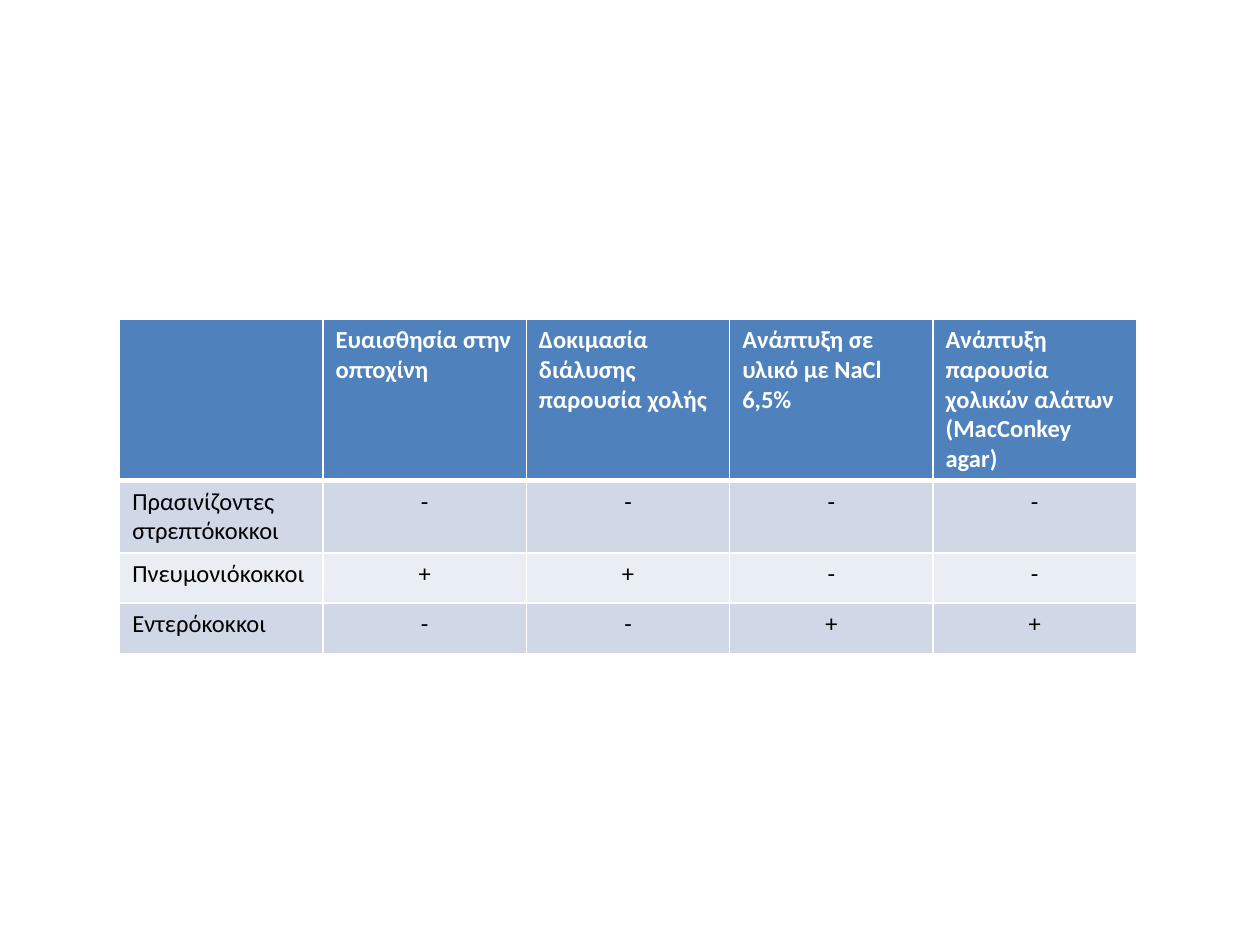
from dataclasses import dataclass

from lxml.etree import SubElement
from pptx import Presentation
from pptx.dml.color import RGBColor
from pptx.enum.text import PP_ALIGN
from pptx.oxml.ns import qn
from pptx.util import Inches, Pt


@dataclass(frozen=True)
class Theme:
    font: str = "Calibri"
    size: int = 14
    header: str = "4F81BD"
    bands: tuple = ("D0D8E8", "E9EDF4")
    light: str = "FFFFFF"
    dark: str = "000000"
    thin: int = 1
    thick: int = 3


HEADINGS = [
    "",
    "Ευαισθησία στην οπτοχίνη",
    "Δοκιμασία διάλυσης παρουσία χολής",
    "Ανάπτυξη σε υλικό με NaCl 6,5%",
    "Ανάπτυξη παρουσία χολικών αλάτων (MacConkey agar)",
]
RESULTS = {
    "Πρασινίζοντες στρεπτόκοκκοι": "----",
    "Πνευμονιόκοκκοι": "++--",
    "Εντερόκοκκοι": "--++",
}
ROW_HEIGHTS = [1.27, 0.57, 0.4, 0.4]


class SlideBuilder:
    def __init__(self, prs, theme):
        self.theme = theme
        self.s = prs.slides.add_slide(prs.slide_layouts[6])

    def borders(self, cell, top, bottom):
        tc_pr = cell._tc.get_or_add_tcPr()
        thin = self.theme.thin
        for side, width in {"L": thin, "R": thin, "T": top, "B": bottom}.items():
            ln = SubElement(tc_pr, qn(f"a:ln{side}"), w=str(Pt(width)))
            fill = SubElement(ln, qn("a:solidFill"))
            SubElement(fill, qn("a:srgbClr"), val=self.theme.light)

    def cell(self, cell, text, fill, color, bold, align):
        cell.fill.solid()
        cell.fill.fore_color.rgb = RGBColor.from_string(fill)
        p = cell.text_frame.paragraphs[0]
        p.alignment = align
        p.font.size = Pt(self.theme.size)
        if not text:
            return
        r = p.add_run()
        r.text = text
        formats = {"name": self.theme.font, "size": Pt(self.theme.size), "bold": bold}
        for name, value in formats.items():
            setattr(r.font, name, value)
        r.font.color.rgb = RGBColor.from_string(color)

    def table(self, rows, left, top, width, heights):
        t = self.theme
        table = self.s.shapes.add_table(
            len(rows), len(rows[0]), Inches(left), Inches(top),
            Inches(width), Inches(sum(heights))).table
        for row, height in zip(table.rows, heights):
            row.height = Inches(height)

        for i, texts in enumerate(rows):
            header = i == 0
            fill = t.header if header else t.bands[(i - 1) % 2]
            for j, text in enumerate(texts):
                cell = table.cell(i, j)
                # The heavy rule lies between the header and the first row
                self.borders(cell, t.thick if i == 1 else t.thin,
                             t.thick if header else t.thin)
                centred = not header and j > 0
                self.cell(cell, text, fill, t.light if header else t.dark, header,
                          PP_ALIGN.CENTER if centred else PP_ALIGN.LEFT)


def main():
    prs = Presentation()
    prs.slide_width, prs.slide_height = Inches(10), Inches(7.5)

    # Table of test results
    builder = SlideBuilder(prs, Theme())
    rows = [HEADINGS] + [[name, *signs] for name, signs in RESULTS.items()]
    builder.table(rows, 0.95, 2.53, 8.07, ROW_HEIGHTS)

    prs.save("out.pptx")


if __name__ == "__main__":
    main()
